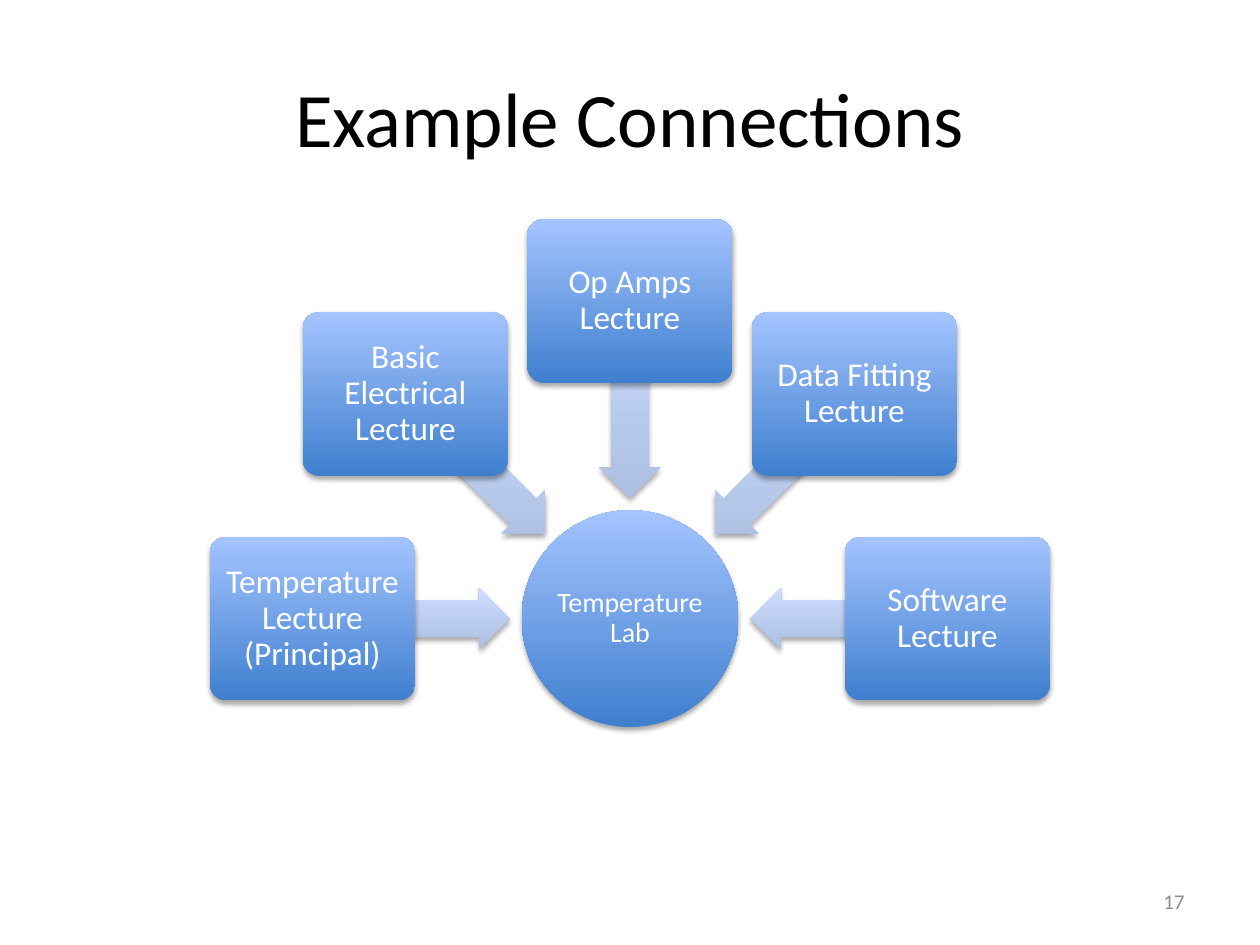
from math import cos, radians, sin

from lxml import etree
from pptx import Presentation
from pptx.dml.color import RGBColor
from pptx.enum.shapes import MSO_SHAPE
from pptx.enum.text import MSO_ANCHOR, PP_ALIGN
from pptx.oxml.ns import qn
from pptx.util import Inches, Pt

ELLIPSE, BOX, ARROW = MSO_SHAPE.OVAL, MSO_SHAPE.ROUNDED_RECTANGLE, MSO_SHAPE.LEFT_ARROW
MIDDLE = MSO_ANCHOR.MIDDLE
CENTER, RIGHT = PP_ALIGN.CENTER, PP_ALIGN.RIGHT

# Content
TITLE = "Example Connections"
PAGE_NUMBER = "17"
LAB = "Temperature Lab"
LECTURES = [
    "Temperature Lecture (Principal)",
    "Basic Electrical Lecture",
    "Op Amps Lecture",
    "Data Fitting Lecture",
    "Software Lecture",
]

# Style
FONT = "Calibri"
COLORS = {
    "title": "000000", "label": "FFFFFF", "page": "8C8C8C", "shadow": "000000",
    "node_dark": "3F7FCE", "node_light": "A4C4FF",
    "arrow_dark": "ADBFE1", "arrow_light": "CCDDFF",
}

# Radial layout, in inches
HUB_X, HUB_Y = 5, 4.91
HUB_SIZE = (1.72, 1.72)
BOX_SIZE, BOX_RADIUS = (1.63, 1.3), 2.52
ARROW_SIZE, ARROW_RADIUS = (1.57, 0.49), 1.74
FIRST_ANGLE, SWEEP = 180, 180


def write(frame, text, size, color, align, inset=None):
    frame.word_wrap = True
    frame.vertical_anchor = MIDDLE
    if inset is not None:
        frame.margin_left = frame.margin_right = Inches(inset)
        frame.margin_top = frame.margin_bottom = Inches(inset)
    paragraph = frame.paragraphs[0]
    paragraph.text = text
    paragraph.alignment = align
    paragraph.font.name = FONT
    paragraph.font.size = Pt(size)
    paragraph.font.color.rgb = RGBColor.from_string(COLORS[color])
    return paragraph


def add_text(slide, left, top, width, height, *text_style):
    box = slide.shapes.add_textbox(Inches(left), Inches(top), Inches(width), Inches(height))
    write(box.text_frame, *text_style)


def add_shadow(shape):
    effects = etree.SubElement(shape._element.spPr, qn("a:effectLst"))
    shadow = etree.SubElement(effects, qn("a:outerShdw"), blurRad=str(Pt(3.1)),
                              dist=str(Pt(1.8)), dir="5400000", rotWithShape="0")
    color = etree.SubElement(shadow, qn("a:srgbClr"), val=COLORS["shadow"])
    etree.SubElement(color, qn("a:alpha"), val="35000")


def add_radial(slide, kind, size, palette, radius=0, angle=0):
    """Add a shaded shape centred at a distance and angle from the hub."""
    width, height = size
    left = HUB_X + radius * cos(radians(angle)) - width / 2
    top = HUB_Y + radius * sin(radians(angle)) - height / 2
    shape = slide.shapes.add_shape(kind, Inches(left), Inches(top), Inches(width), Inches(height))
    shape.line.fill.background()
    shape.fill.gradient()
    shape.fill.gradient_angle = 90
    for stop, position, shade in zip(shape.fill.gradient_stops, (0, 1), ("dark", "light")):
        stop.position = position
        stop.color.rgb = RGBColor.from_string(COLORS[f"{palette}_{shade}"])
    # Shading stays vertical when the shape turns
    shape._element.spPr.find(qn("a:gradFill")).set("rotWithShape", "0")
    add_shadow(shape)
    return shape


def add_label(shape, text, size, inset):
    paragraph = write(shape.text_frame, text, size, "label", CENTER, inset)
    paragraph.line_spacing = 0.9


def main():
    deck = Presentation()
    deck.slide_width, deck.slide_height = Inches(10), Inches(7.5)
    slide = deck.slides.add_slide(deck.slide_layouts[6])

    # Title
    add_text(slide, 0.5, 0.3, 9, 1.25, TITLE, 44, "title", CENTER)

    # Lab at the hub
    lab = add_radial(slide, ELLIPSE, HUB_SIZE, "node")
    add_label(lab, LAB, 16, 0.01)

    # Lectures around it, each with an arrow pointing in
    step = SWEEP / (len(LECTURES) - 1)
    for index, lecture in enumerate(LECTURES):
        angle = FIRST_ANGLE + index * step
        arrow = add_radial(slide, ARROW, ARROW_SIZE, "arrow", ARROW_RADIUS, angle)
        arrow.rotation = angle % 360
        arrow.adjustments[0], arrow.adjustments[1] = 0.6, 0.5
        box = add_radial(slide, BOX, BOX_SIZE, "node", BOX_RADIUS, angle)
        box.adjustments[0] = 0.1
        add_label(box, lecture, 19, 0.04)

    # Page number
    add_text(slide, 7.17, 6.95, 2.33, 0.4, PAGE_NUMBER, 12, "page", RIGHT)

    deck.save("out.pptx")


if __name__ == "__main__":
    main()
